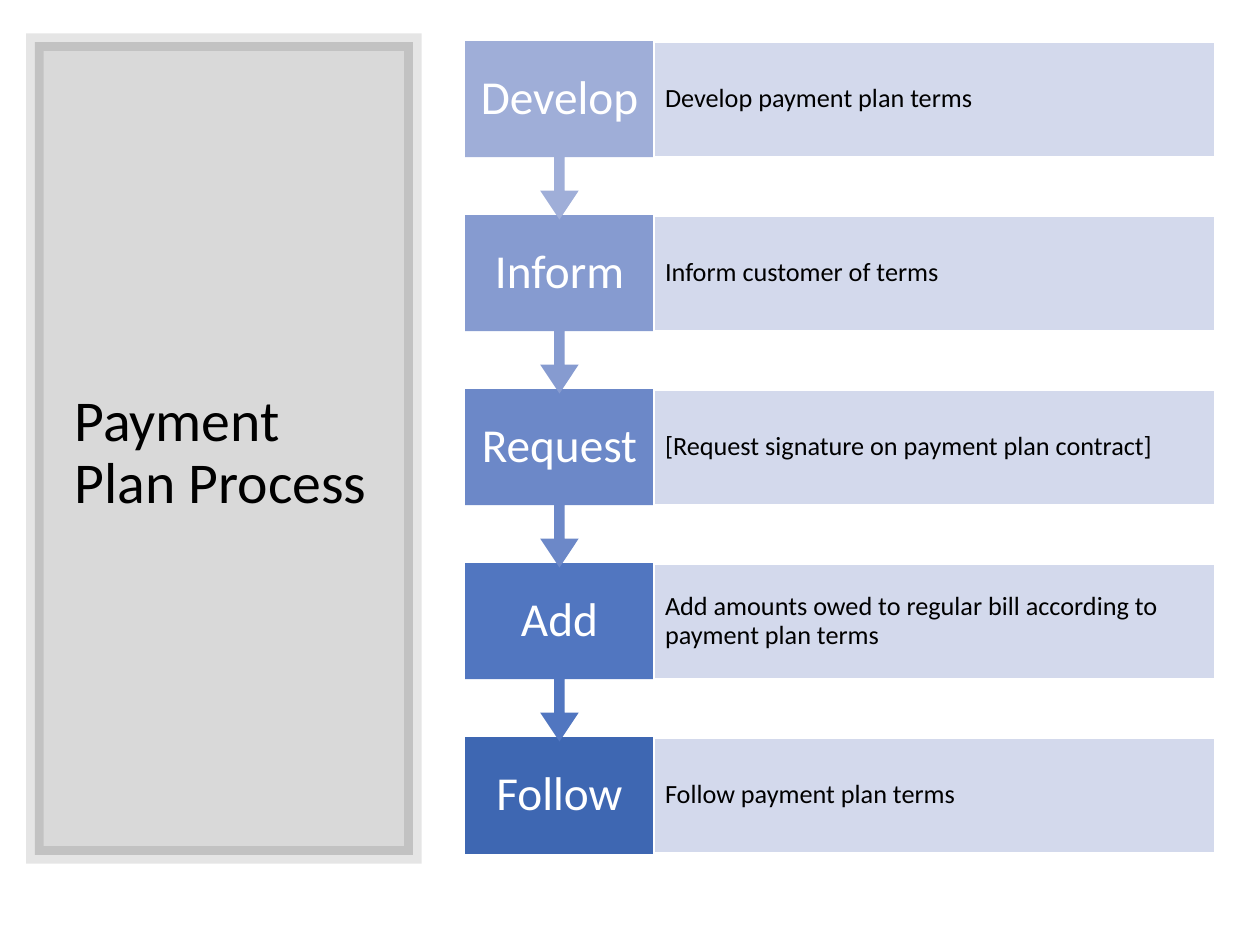
from lxml.etree import SubElement
from pptx import Presentation
from pptx.dml.color import RGBColor
from pptx.enum.shapes import MSO_SHAPE as SHAPE
from pptx.enum.text import MSO_ANCHOR as ANCHOR, MSO_AUTO_SIZE as FIT, PP_ALIGN as ALIGN
from pptx.oxml.ns import qn
from pptx.util import Emu, Pt

PX = 914400 / 126
FONT = "Calibri"
COLORS = {"black": "000000", "white": "FFFFFF", "detail": "CFD5EA"}
STEPS = [
    ("Develop", "Develop payment plan terms", "9FAED8"),
    ("Inform", "Inform customer of terms", "869BD0"),
    ("Request", "[Request signature on payment plan contract]", "6C88C8"),
    ("Add", "Add amounts owed to regular bill according to payment plan terms", "5176C0"),
    ("Follow", "Follow payment plan terms", "3E67B2"),
]


def px(n):
    """Turn pixels into EMU."""
    return Emu(round(n * PX))


def paint(fill, color, alpha=100):
    """Set a solid fill with an opacity in percent."""
    fill.solid()
    fill.fore_color.rgb = RGBColor.from_string(color)
    if alpha < 100:
        clr = fill._xPr.find(qn("a:solidFill"))[0]
        SubElement(clr, qn("a:alpha"), val=str(alpha * 1000))


def add_box(s, kind, box, color, line, alpha=100, width=1, line_alpha=100):
    """Add a filled shape with a mitred outline and no shadow."""
    sp = s.shapes.add_shape(kind, *map(px, box))
    sp.shadow.inherit = False
    paint(sp.fill, color, alpha)
    paint(sp.line.fill, line, line_alpha)
    sp.line.width = Pt(width)
    SubElement(sp.line._get_or_add_ln(), qn("a:miter"), lim="800000")
    return sp


def write(sp, text, size, color, align=ALIGN.LEFT, pad=None):
    """Write one vertically centred paragraph into a shape."""
    tf = sp.text_frame
    tf.word_wrap = True
    tf.auto_size = FIT.NONE
    tf.vertical_anchor = ANCHOR.MIDDLE
    if pad:
        tf.margin_left = tf.margin_right = px(pad[0])
        tf.margin_top = tf.margin_bottom = px(pad[1])
    p = tf.paragraphs[0]
    p.alignment = align
    p.line_spacing = 0.9
    r = p.add_run()
    r.text = text
    r.font.name = FONT
    r.font.size = Pt(size)
    r.font.color.rgb = RGBColor.from_string(color)


def title_panel(s, x, y, w, h):
    """Place the grey panel behind the slide title."""
    black = COLORS["black"]
    title = s.shapes.title
    title.left, title.top, title.width, title.height = map(
        px, (x + 27, y + 46, w - 52, h - 82))
    write(title, "Payment Plan Process", 33, black)
    panel = add_box(s, SHAPE.RECTANGLE, (x, y, w, h), black, black, 15, 10, 10)
    title.element.addprevious(panel.element)


def process(s, x, y, w, h):
    """Stack the steps evenly from last to first, so arrow tips lie on top."""
    label_w, row_h, arrow_h = 187, 115, 176
    pitch = (h - row_h) // (len(STEPS) - 1)
    last = len(STEPS) - 1
    for i, (label, detail, color) in reversed(list(enumerate(STEPS))):
        top = y + i * pitch
        kind = SHAPE.RECTANGLE if i == last else SHAPE.DOWN_ARROW_CALLOUT
        height = row_h if i == last else arrow_h
        stage = add_box(s, kind, (x, top, label_w, height), color, color)
        if i < last:
            for k, value in enumerate((0.05, 0.1, 0.15, 0.65)):
                stage.adjustments[k] = value
        write(stage, label, 27, COLORS["white"], ALIGN.CENTER, (13, 26))
        note = add_box(s, SHAPE.RECTANGLE, (x + label_w + 1, top, w - label_w - 1, row_h),
                       COLORS["detail"], COLORS["white"], 90)
        write(note, detail, 15, COLORS["black"], pad=(11, 26))


def main():
    """Build and save the slide."""
    prs = Presentation()
    prs.slide_width, prs.slide_height = px(1260), px(945)
    s = prs.slides.add_slide(prs.slide_layouts[5])
    title_panel(s, 35, 42, 378, 813)
    process(s, 466, 42, 749, 813)
    prs.save("out.pptx")


if __name__ == "__main__":
    main()
